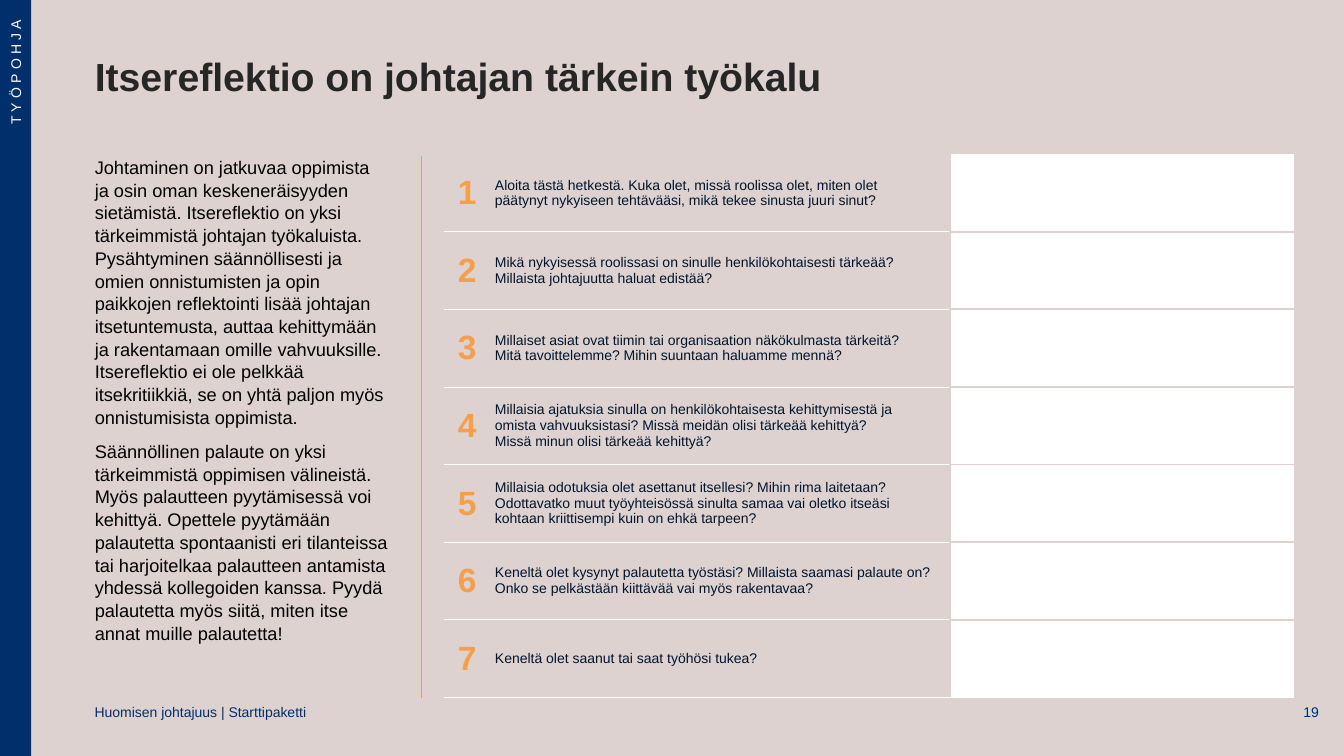
from lxml import etree
from pptx import Presentation
from pptx import util as u
from pptx.dml.color import RGBColor
from pptx.enum import shapes, text
from pptx.oxml import ns

FONT = "Arial"
COLORS = {
    "background": "DDD2D0",
    "navy": "002F6C",
    "orange": "F59F4B",
    "divider": "F49B45",
    "white": "FFFFFF",
    "title": "262626",
    "body": "000000",
    "question": "01152E",
}
INTRO = [
    "Johtaminen on jatkuvaa oppimista \nja osin oman keskeneräisyyden sietämistä. "
    "Itsereflektio on yksi tärkeimmistä johtajan työkaluista. Pysähtyminen säännöllisesti "
    "ja omien onnistumisten ja opin paikkojen reflektointi lisää johtajan itsetuntemusta, "
    "auttaa kehittymään ja rakentamaan omille vahvuuksille. Itsereflektio ei ole pelkkää "
    "itsekritiikkiä, se on yhtä paljon myös onnistumisista oppimista.",
    "Säännöllinen palaute on yksi tärkeimmistä oppimisen välineistä. Myös palautteen "
    "pyytämisessä voi kehittyä. Opettele pyytämään palautetta spontaanisti eri tilanteissa "
    "tai harjoitelkaa palautteen antamista yhdessä kollegoiden kanssa. Pyydä palautetta "
    "myös siitä, miten itse annat muille palautetta!",
]
QUESTIONS = [
    "Aloita tästä hetkestä. Kuka olet, missä roolissa olet, miten olet \n"
    "päätynyt nykyiseen tehtävääsi, mikä tekee sinusta juuri sinut?",
    "Mikä nykyisessä roolissasi on sinulle henkilökohtaisesti tärkeää? \n"
    "Millaista johtajuutta haluat edistää?",
    "Millaiset asiat ovat tiimin tai organisaation näkökulmasta tärkeitä? \n"
    "Mitä tavoittelemme? Mihin suuntaan haluamme mennä?",
    "Millaisia ajatuksia sinulla on henkilökohtaisesta kehittymisestä ja \n"
    "omista vahvuuksistasi? Missä meidän olisi tärkeää kehittyä? \n"
    "Missä minun olisi tärkeää kehittyä?",
    "Millaisia odotuksia olet asettanut itsellesi? Mihin rima laitetaan? \n"
    "Odottavatko muut työyhteisössä sinulta samaa vai oletko itseäsi \n"
    "kohtaan kriittisempi kuin on ehkä tarpeen?",
    "Keneltä olet kysynyt palautetta työstäsi? Millaista saamasi palaute on? \n"
    "Onko se pelkästään kiittävää vai myös rakentavaa?",
    "Keneltä olet saanut tai saat työhösi tukea?",
]
COLUMN_WIDTHS = [0.47, 4.55, 3.41]
ROW_HEIGHT = 0.77


def color(name):
    return RGBColor.from_string(COLORS[name])


def place(shape, left, top, width, height):
    shape.left, shape.top = u.Inches(left), u.Inches(top)
    shape.width, shape.height = u.Inches(width), u.Inches(height)


def set_insets(target, left, top, right, bottom):
    target.margin_left, target.margin_top = u.Inches(left), u.Inches(top)
    target.margin_right, target.margin_bottom = u.Inches(right), u.Inches(bottom)


def write(paragraph, content, size, color_name, bold=False, align=text.PP_ALIGN.LEFT):
    paragraph.alignment = align
    for index, line in enumerate(content.split("\n")):
        if index:
            paragraph.add_line_break()
        run = paragraph.add_run()
        run.text = line
        run.font.name = FONT
        run.font.size = u.Pt(size)
        run.font.bold = bold
        run.font.color.rgb = color(color_name)


def prepare_frame(shape, anchor, insets=(0.1, 0.05, 0.1, 0.05)):
    frame = shape.text_frame
    frame.word_wrap = True
    frame.auto_size = text.MSO_AUTO_SIZE.NONE
    frame.vertical_anchor = anchor
    set_insets(frame, *insets)
    return frame


def add_title(slide):
    title = slide.shapes.title
    place(title, 0.84, 0.47, 11.29, 0.57)
    frame = prepare_frame(title, text.MSO_ANCHOR.MIDDLE)
    write(frame.paragraphs[0], "Itsereflektio on johtajan tärkein työkalu", 28, "title", bold=True)


def add_intro(slide):
    body = slide.placeholders[1]
    place(body, 0.84, 1.49, 3.11, 5.73)
    frame = prepare_frame(body, text.MSO_ANCHOR.TOP)
    for index, content in enumerate(INTRO):
        paragraph = frame.add_paragraph() if index else frame.paragraphs[0]
        paragraph.line_spacing = 1.04
        paragraph.space_before = u.Pt(0)
        paragraph.space_after = u.Pt(8)
        properties = paragraph._p.get_or_add_pPr()
        properties.set("marL", "0")
        properties.set("indent", "0")
        etree.SubElement(properties, ns.qn("a:buNone"))
        write(paragraph, content, 13, "body")


def add_label(slide, content, bounds, anchor, insets, align):
    label = slide.shapes.add_textbox(0, 0, 0, 0)
    place(label, *bounds)
    frame = prepare_frame(label, anchor, insets)
    write(frame.paragraphs[0], content, 10, "navy", align=align)


def add_side_band(slide):
    band = slide.shapes.add_shape(shapes.MSO_SHAPE.RECTANGLE, 0, 0, u.Inches(0.31), u.Inches(7.5))
    band.shadow.inherit = False
    band.fill.solid()
    band.fill.fore_color.rgb = color("navy")
    band.line.fill.background()
    frame = prepare_frame(band, text.MSO_ANCHOR.MIDDLE, (0.1, 0.2, 0.1, 0.05))
    frame._txBody.bodyPr.set("vert", "vert270")
    paragraph = frame.paragraphs[0]
    write(paragraph, "TYÖPOHJA", 10, "white", align=text.PP_ALIGN.RIGHT)
    paragraph.runs[0]._r.get_or_add_rPr().set("spc", "300")


def add_divider(slide):
    x = u.Inches(4.18)
    divider = slide.shapes.add_connector(
        shapes.MSO_CONNECTOR.STRAIGHT, x, u.Inches(1.55), x, u.Inches(6.92))
    divider.line.color.rgb = color("divider")
    divider.line.width = u.Pt(0.75)
    etree.SubElement(divider._element.spPr, ns.qn("a:effectLst"))


def set_borders(cell, borders):
    properties = cell._tc.get_or_add_tcPr()
    for index, side in enumerate("LRTB"):
        line = etree.Element(ns.qn(f"a:ln{side}"))
        if borders[side]:
            color_name, width = borders[side]
            line.set("w", str(u.Pt(width)))
            fill = etree.SubElement(line, ns.qn("a:solidFill"))
            etree.SubElement(fill, ns.qn("a:srgbClr"), val=COLORS[color_name])
        else:
            etree.SubElement(line, ns.qn("a:noFill"))
        properties.insert(index, line)


def add_question_table(slide):
    last_row = len(QUESTIONS) - 1
    frame = slide.shapes.add_table(
        len(QUESTIONS), len(COLUMN_WIDTHS), u.Inches(4.4), u.Inches(1.53),
        u.Inches(sum(COLUMN_WIDTHS)), u.Inches(ROW_HEIGHT * len(QUESTIONS)))
    table = frame.table
    table.first_row = table.horz_banding = False
    for column, width in zip(table.columns, COLUMN_WIDTHS):
        column.width = u.Inches(width)
    white_rule, gap = ("white", 0.75), ("background", 1.5)
    for row, question in enumerate(QUESTIONS):
        table.rows[row].height = u.Inches(ROW_HEIGHT)
        number_cell, question_cell, answer_cell = table.rows[row].cells
        write(number_cell.text_frame.paragraphs[0], str(row + 1), 24, "orange",
              bold=True, align=text.PP_ALIGN.CENTER)
        write(question_cell.text_frame.paragraphs[0], question, 10, "question")
        for cell in (number_cell, question_cell):
            cell.vertical_anchor = text.MSO_ANCHOR.MIDDLE
            set_insets(cell, 0.04, 0.05, 0.04, 0.05)
            cell.fill.background()
        answer_cell.fill.solid()
        answer_cell.fill.fore_color.rgb = color("white")
        for cell in (number_cell, question_cell, answer_cell):
            rule = gap if cell is answer_cell else white_rule
            set_borders(cell, {
                "L": None if cell is number_cell else gap,
                "R": None if cell is answer_cell else gap,
                "T": rule if row else None,
                "B": white_rule if row == last_row else rule,
            })


def main():
    presentation = Presentation()
    presentation.slide_width = u.Inches(13.33)
    presentation.slide_height = u.Inches(7.5)
    slide = presentation.slides.add_slide(presentation.slide_layouts[1])
    slide.background.fill.solid()
    slide.background.fill.fore_color.rgb = color("background")
    add_intro(slide)
    add_title(slide)
    add_label(slide, "19", (12.51, 6.92, 0.59, 0.29), text.MSO_ANCHOR.MIDDLE,
              (0.1, 0.05, 0.02, 0.05), text.PP_ALIGN.RIGHT)
    add_question_table(slide)
    add_divider(slide)
    add_side_band(slide)
    add_label(slide, "Huomisen johtajuus | Starttipaketti", (0.84, 6.93, 3.99, 0.28),
              text.MSO_ANCHOR.TOP, (0.1, 0.05, 0.1, 0.05), text.PP_ALIGN.LEFT)
    presentation.save("out.pptx")


if __name__ == "__main__":
    main()
